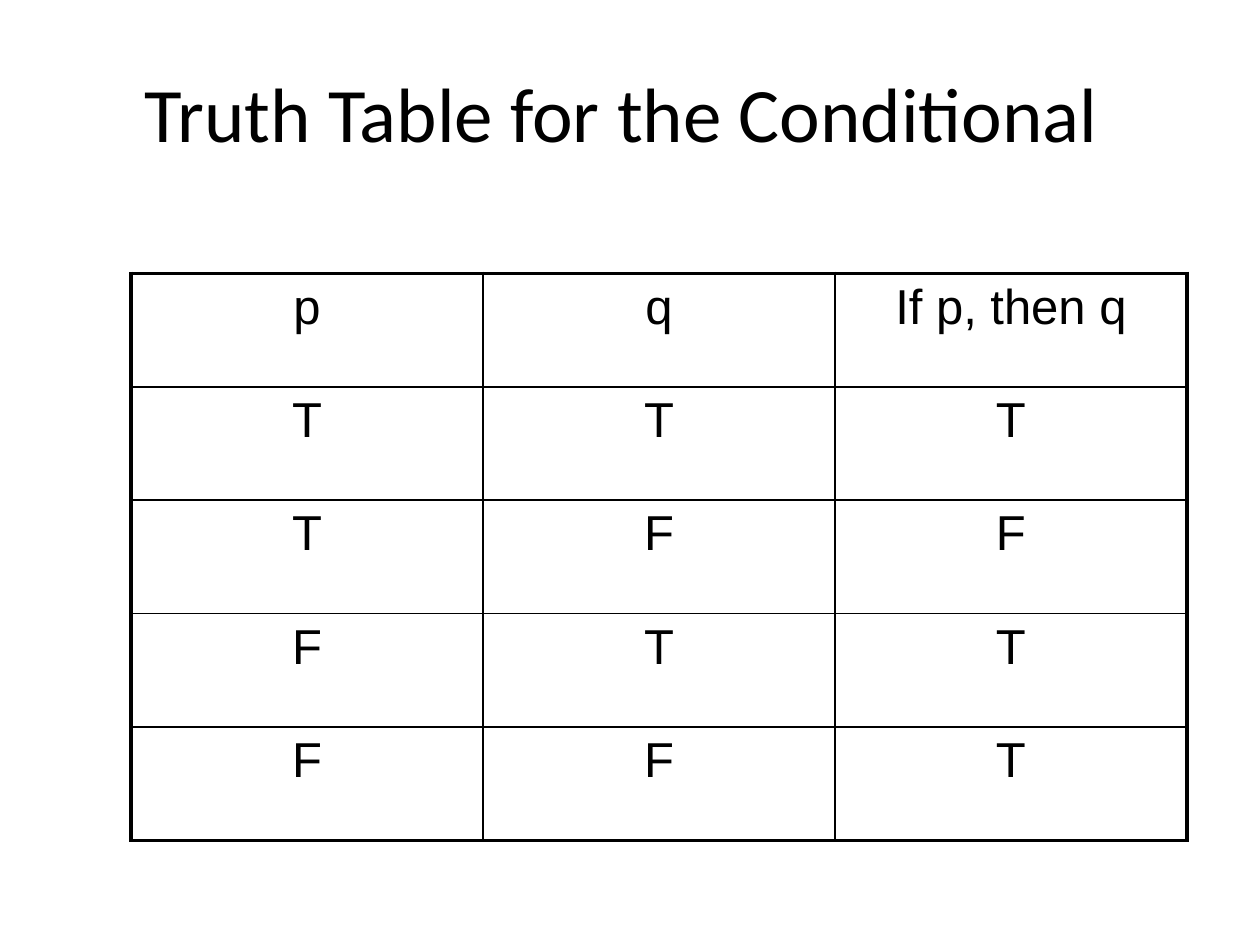
import itertools
from dataclasses import dataclass

import lxml.etree
import pptx
import pptx.dml.color
import pptx.enum.text
import pptx.oxml.ns
import pptx.util
from pptx.util import Inches


@dataclass(frozen=True)
class Theme:
    ink: str = "000000"
    head_font: str = "Calibri"
    body_font: str = "Arial"
    head_size: int = 44
    body_size: int = 28
    thick: float = 2.25
    thin: float = 1


THEME = Theme()


def write(frame, text, font, size):
    para = frame.paragraphs[0]
    para.text = text
    para.alignment = pptx.enum.text.PP_ALIGN.CENTER
    para.font.name = font
    para.font.size = pptx.util.Pt(size)
    para.font.color.rgb = pptx.dml.color.RGBColor.from_string(THEME.ink)


def add_title(slide, text, left, top, width, height):
    frame = slide.shapes.add_textbox(left, top, width, height).text_frame
    frame.word_wrap = True
    frame.vertical_anchor = pptx.enum.text.MSO_ANCHOR.MIDDLE
    write(frame, text, THEME.head_font, THEME.head_size)


def set_borders(cell, outer):
    """Draw all four sides; outer maps each side to whether it is on the rim."""
    props = cell._tc.get_or_add_tcPr()
    qn = pptx.oxml.ns.qn
    for side, rim in outer.items():
        width = pptx.util.Pt(THEME.thick if rim else THEME.thin)
        line = lxml.etree.SubElement(props, qn(f"a:ln{side}"), w=str(width))
        fill = lxml.etree.SubElement(line, qn("a:solidFill"))
        lxml.etree.SubElement(fill, qn("a:srgbClr"), val=THEME.ink)


def add_truth(slide, rows, left, top, width, height):
    """Add the truth table with even cells and a thick rim."""
    count, span = len(rows), len(rows[0])
    table = slide.shapes.add_table(count, span, left, top, width, height).table
    table.first_row = table.horz_banding = False
    for r, row in enumerate(rows):
        for c, text in enumerate(row):
            cell = table.cell(r, c)
            write(cell.text_frame, text, THEME.body_font, THEME.body_size)
            set_borders(cell, {"L": c == 0, "R": c == span - 1,
                               "T": r == 0, "B": r == count - 1})
            cell.fill.background()


def main():
    deck = pptx.Presentation()
    deck.slide_width, deck.slide_height = Inches(10), Inches(7.5)
    slide = deck.slides.add_slide(deck.slide_layouts[6])
    add_title(slide, "Truth Table for the Conditional",
              Inches(1.02), Inches(0.11), Inches(7.83), Inches(1.55))
    rows = [("p", "q", "If p, then q")]
    for p, q in itertools.product("TF", repeat=2):
        rows.append((p, q, "F" if (p, q) == ("T", "F") else "T"))
    add_truth(slide, rows, Inches(1.04), Inches(2.17), Inches(8.38), Inches(4.5))
    deck.save("out.pptx")


if __name__ == "__main__":
    main()
